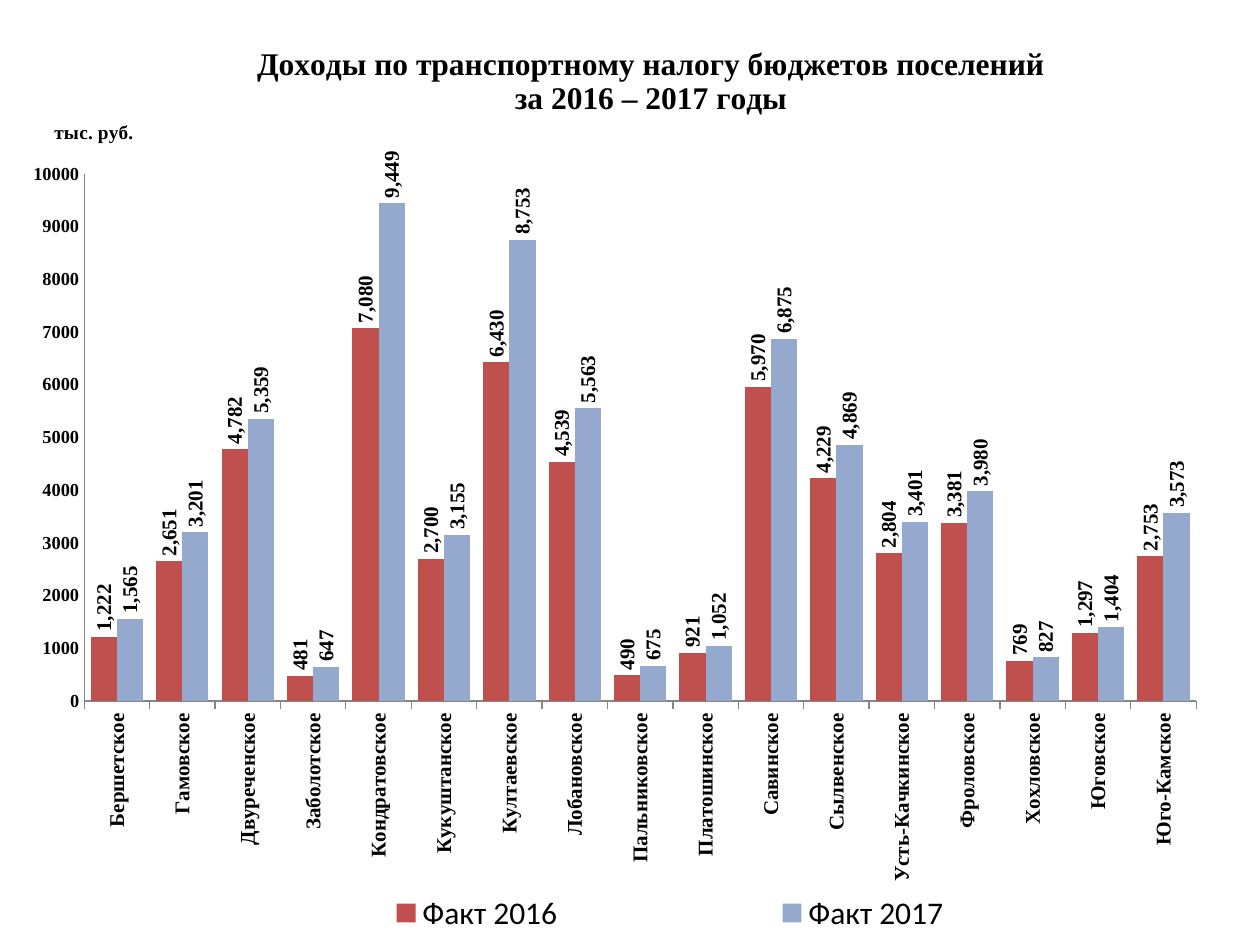
from pptx import Presentation
from pptx.chart.data import CategoryChartData
from pptx.dml.color import RGBColor
from pptx.enum.chart import (XL_CHART_TYPE, XL_LABEL_POSITION, XL_LEGEND_POSITION,
                             XL_TICK_LABEL_POSITION, XL_TICK_MARK)
from pptx.oxml import parse_xml
from pptx.oxml.ns import nsdecls, qn
from pptx.util import Pt

RED = RGBColor(0xC0, 0x50, 0x4D)
BLUE = RGBColor(0x95, 0xA9, 0xCF)
GRAY = RGBColor(0x86, 0x86, 0x86)
BLACK = RGBColor(0, 0, 0)
SERIF = "Times New Roman"
SANS = "Calibri"
UP = -5400000  # quarter turn, in 1/60000 degree

TITLE = "Доходы по транспортному налогу бюджетов поселений\nза 2016 – 2017 годы"
NAMES = ["Бершетское", "Гамовское", "Двуреченское", "Заболотское", "Кондратовское",
         "Кукуштанское", "Култаевское", "Лобановское", "Пальниковское",
         "Платошинское", "Савинское", "Сылвенское", "Усть-Качкинское",
         "Фроловское", "Хохловское", "Юговское", "Юго-Камское"]
SERIES = [
    ("Факт 2016", RED, [1222, 2651, 4782, 481, 7080, 2700, 6430, 4539, 490, 921,
                        5970, 4229, 2804, 3381, 769, 1297, 2753]),
    ("Факт 2017", BLUE, [1565, 3201, 5359, 647, 9449, 3155, 8753, 5563, 675, 1052,
                         6875, 4869, 3401, 3980, 827, 1404, 3573]),
]


def style(font, size, bold=True, name=SERIF):
    font.size = Pt(size)
    font.bold = bold
    font.name = name
    font.color.rgb = BLACK


def write(frame, text, **form):
    frame.text = text
    for par in frame.paragraphs:
        for run in par.runs:
            style(run.font, **form)


def turn(part, angle):
    for body in part.iter(qn("a:bodyPr")):
        body.set("rot", str(angle))
        body.set("vert", "horz")


def place(part, after=None, inner=False, **spots):
    """Set a manual layout, in fractions of the chart."""
    for old in part.findall(qn("c:layout")):
        part.remove(old)
    tags = '<c:layoutTarget val="inner"/>' if inner else ""
    tags += "".join(f'<c:{key}Mode val="edge"/>' for key in "xy")
    tags += "".join(f'<c:{key} val="{val}"/>' for key, val in spots.items())
    lay = parse_xml(f'<c:layout {nsdecls("c")}><c:manualLayout>{tags}'
                    '</c:manualLayout></c:layout>')
    if after:
        part.find(qn(after)).addnext(lay)
    else:
        part.insert(0, lay)


def add_axes(chart):
    # Settlement names
    cat = chart.category_axis
    cat.major_tick_mark = XL_TICK_MARK.OUTSIDE
    cat.tick_label_position = XL_TICK_LABEL_POSITION.LOW
    style(cat.tick_labels.font, 12)
    turn(cat._element, UP)

    # Amounts
    val = chart.value_axis
    val.minimum_scale, val.maximum_scale, val.major_unit = 0, 10000, 1000
    val.has_major_gridlines = False
    val.major_tick_mark = XL_TICK_MARK.NONE
    val.tick_labels.number_format = "0"
    val.tick_labels.number_format_is_linked = False
    style(val.tick_labels.font, 10.5)
    for axis in (cat, val):
        axis.format.line.color.rgb = GRAY
        axis.format.line.width = Pt(0.75)

    # Unit above the amounts
    unit = val.axis_title
    write(unit.text_frame, "тыс. руб.", size=11)
    turn(unit._element, 0)
    place(unit._element, after="c:tx", x=0.03, y=0.12)


def add_bars(plot):
    plot.gap_width = 50
    plot.overlap = 0
    plot.vary_by_categories = False
    for bars, (_, color, _) in zip(plot.series, SERIES):
        bars.format.fill.solid()
        bars.format.fill.fore_color.rgb = color
        tags = bars.data_labels
        tags.show_value = True
        tags.number_format = "#,##0"
        tags.number_format_is_linked = False
        tags.position = XL_LABEL_POSITION.OUTSIDE_END
        style(tags.font, 12)
        turn(tags._element, UP)


def add_legend(chart):
    chart.has_legend = True
    key = chart.legend
    key.position = XL_LEGEND_POSITION.RIGHT
    key.include_in_layout = False
    style(key.font, 18, bold=False, name=SANS)
    place(key._element, after="c:legendPos", x=0.14, y=0.94, w=0.82, h=0.06)


def add_chart(slide, left, top, width, height):
    data = CategoryChartData()
    data.categories = NAMES
    for name, _, vals in SERIES:
        data.add_series(name, vals)
    chart = slide.shapes.add_chart(XL_CHART_TYPE.COLUMN_CLUSTERED, Pt(left), Pt(top),
                                   Pt(width), Pt(height), data).chart
    style(chart.font, 10, bold=False, name=SANS)

    # Heading
    chart.has_title = True
    head = chart.chart_title
    write(head.text_frame, TITLE, size=18)
    place(head._element, after="c:tx", x=0.2, y=0.04)

    add_axes(chart)
    add_bars(chart.plots[0])
    add_legend(chart)
    area = chart._chartSpace.find(".//" + qn("c:plotArea"))
    place(area, inner=True, x=0.058, y=0.182, w=0.934, h=0.562)


def main():
    deck = Presentation()
    deck.slide_width, deck.slide_height = Pt(720), Pt(540)
    slide = deck.slides.add_slide(deck.slide_layouts[6])
    add_chart(slide, 8.64, 2.16, 680.4, 535.68)
    deck.save("out.pptx")


if __name__ == "__main__":
    main()
